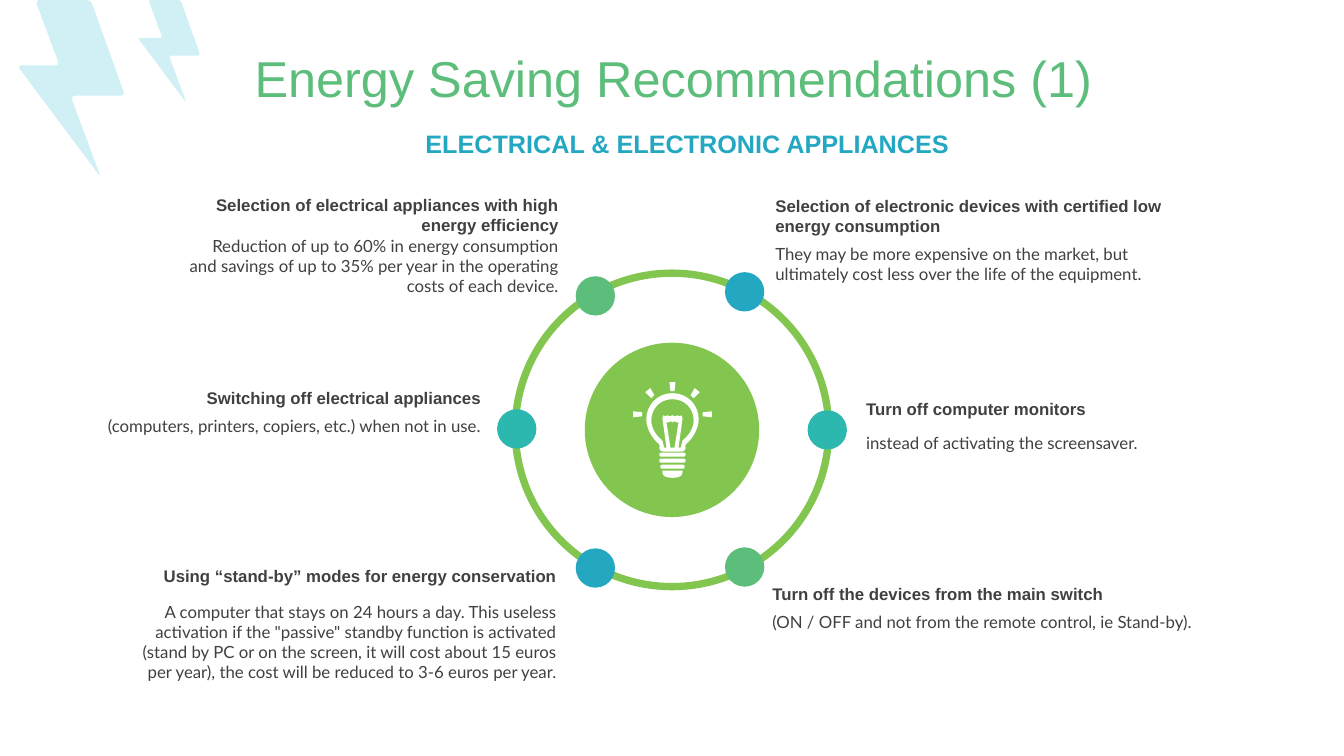
from dataclasses import dataclass

from pptx import Presentation
from pptx.dml.color import RGBColor
from pptx.enum.shapes import MSO_SHAPE as Preset
from pptx.enum.text import MSO_ANCHOR as Anchor, PP_ALIGN as Align
from pptx.shapes.autoshape import Shape
from pptx.slide import Slide
from pptx.util import Inches, Pt

WHITE = RGBColor(0xFF, 0xFF, 0xFF)
PALE_BLUE = RGBColor(0xD0, 0xF0, 0xF6)
LIME = RGBColor(0x82, 0xC6, 0x50)
GREEN = RGBColor(0x5C, 0xBE, 0x7A)
TEAL = RGBColor(0x2C, 0xB8, 0xAE)
BLUE = RGBColor(0x24, 0xA8, 0xC2)
DARK = RGBColor(0x40, 0x40, 0x40)

Point = tuple[float, float]
Outline = list[Point]

KNOB_SIZE = 0.39
BULB_AXIS = 6.67
BOLT = [(0.16, 0), (0.71, 0), (1.05, 0.95), (0.51, 0.95), (0.81, 1.76), (-0.02, 0.65), (0.4, 0.65)]


@dataclass
class Style:
    font: str
    size: float
    color: RGBColor
    bold: bool = False
    align: Align = Align.LEFT
    anchor: Anchor = Anchor.TOP


@dataclass
class Knob:
    left: float
    top: float
    color: RGBColor


@dataclass
class Note:
    left: float
    width: float
    align: Align
    heading: str
    heading_top: float
    heading_height: float
    body: str
    body_top: float
    body_height: float


KNOBS = [
    Knob(7.19, 2.7, BLUE), Knob(7.19, 5.43, GREEN), Knob(8.01, 4.07, TEAL),
    Knob(5.71, 2.74, GREEN), Knob(5.71, 5.44, BLUE), Knob(4.93, 4.06, TEAL),
]

NOTES = [
    Note(7.69, 4.25, Align.LEFT,
         "Selection of electronic devices with certified low energy consumption", 1.89, 0.5,
         "They may be more expensive on the market, but ultimately cost less over the life "
         "of the equipment.", 2.37, 0.5),
    Note(8.59, 3.96, Align.LEFT, "Turn off computer monitors", 3.91, 0.3,
         "instead of activating the screensaver.", 4.24, 0.3),
    Note(7.66, 4.58, Align.LEFT, "Turn off the devices from the main switch", 5.74, 0.3,
         "(ON / OFF and not from the remote control, ie Stand-by).", 6.02, 0.3),
    Note(1.84, 3.8, Align.RIGHT,
         "Selection of electrical appliances with high energy efficiency", 1.88, 0.5,
         "Reduction of up to 60% in energy consumption and savings of up to 35% per year "
         "in the operating costs of each device.", 2.29, 0.5),
    Note(0.89, 3.98, Align.RIGHT, "Switching off electrical appliances", 3.8, 0.3,
         "(computers, printers, copiers, etc.) when not in use.", 4.08, 0.3),
    Note(1.27, 4.35, Align.RIGHT, "Using “stand-by” modes for energy conservation", 5.56, 0.3,
         "A computer that stays on 24 hours a day. This useless activation if the \"passive\" "
         "standby function is activated (stand by PC or on the screen, it will cost about "
         "15 euros per year), the cost will be reduced to 3-6 euros per year.", 5.92, 0.91),
]


def curve(start: Point, *controls: Point, steps: int = 8) -> Outline:
    """Sample a chain of cubic Bézier segments, three controls for each."""
    points = [start]
    for index in range(0, len(controls), 3):
        corners = (points[-1], *controls[index:index + 3])
        for step in range(1, steps + 1):
            t = step / steps
            weights = ((1 - t) ** 3, 3 * t * (1 - t) ** 2, 3 * t * t * (1 - t), t ** 3)
            points.append((sum(w * x for w, (x, _) in zip(weights, corners)),
                           sum(w * y for w, (_, y) in zip(weights, corners))))
    return points


def rounded(corners: Outline, reach: float) -> Outline:
    """Round each corner, starting at the given distance before it."""
    points: Outline = []
    for index, (x, y) in enumerate(corners):
        ends = []
        for other_x, other_y in (corners[index - 1], corners[(index + 1) % len(corners)]):
            share = reach / ((other_x - x) ** 2 + (other_y - y) ** 2) ** 0.5
            ends.append((x + share * (other_x - x), y + share * (other_y - y)))
        middle = [(end_x + 2 * (x - end_x) / 3, end_y + 2 * (y - end_y) / 3) for end_x, end_y in ends]
        points += curve(ends[0], *middle, ends[1], steps=4)
    return points


def mirrored(half: Outline) -> Outline:
    return [(-x, y) for x, y in reversed(half)]


def paint(shape: Shape, color: RGBColor) -> None:
    shape.shadow.inherit = False
    shape.fill.solid()
    shape.fill.fore_color.rgb = color
    shape.line.fill.background()


def add_outlines(page: Slide, outlines: list[Outline], color: RGBColor) -> None:
    """Draw one freeform; outlines inside others cut holes."""
    paths = [[(Inches(x), Inches(y)) for x, y in outline] for outline in outlines]
    builder = page.shapes.build_freeform(*paths[0][0])
    for index, (start, *others) in enumerate(paths):
        if index:
            builder.move_to(*start)
        builder.add_line_segments(others, close=True)
    paint(builder.convert_to_shape(), color)


def add_circle(page: Slide, left: float, top: float, size: float, color: RGBColor) -> Shape:
    circle = page.shapes.add_shape(
        Preset.OVAL, Inches(left), Inches(top), Inches(size), Inches(size))
    paint(circle, color)
    return circle


def add_text(page: Slide, text: str, left: float, top: float, width: float, height: float,
             style: Style, margins: tuple[float, float, float, float]) -> None:
    box = page.shapes.add_textbox(Inches(left), Inches(top), Inches(width), Inches(height))
    frame = box.text_frame
    frame.word_wrap = True
    frame.vertical_anchor = style.anchor
    (frame.margin_left, frame.margin_top,
     frame.margin_right, frame.margin_bottom) = map(Inches, margins)
    para = frame.paragraphs[0]
    para.text = text
    para.alignment = style.align
    para.font.name = style.font
    para.font.size = Pt(style.size)
    para.font.bold = style.bold
    para.font.color.rgb = style.color


def add_note(page: Slide, note: Note) -> None:
    margins = (0, 0.05, 0.1, 0.05)
    add_text(page, note.heading, note.left, note.heading_top, note.width, note.heading_height,
             Style("Arial", 12, DARK, True, note.align, Anchor.MIDDLE), margins)
    add_text(page, note.body, note.left, note.body_top, note.width, note.body_height,
             Style("Lato", 12, DARK, align=note.align), margins)


def add_bulb(page: Slide) -> None:
    glass = curve((0, 3.9), (0.15, 3.9), (0.26, 4.02), (0.26, 4.16),
                  (0.26, 4.26), (0.19, 4.36), (0.14, 4.4), (0.12, 4.42), (0.13, 4.43), (0.13, 4.45),
                  (0.12, 4.47), (0.11, 4.48), (0.09, 4.48))
    hollow = curve((0, 3.96), (0.12, 3.96), (0.21, 4.05), (0.21, 4.17),
                   (0.21, 4.25), (0.16, 4.32), (0.11, 4.36), (0.09, 4.38), (0.1, 4.38), (0.09, 4.41),
                   (0.08, 4.44), (0.09, 4.44), (0.07, 4.44))
    filament = [(0, 4.12), (0.03, 4.13), (0.05, 4.12), (0.07, 4.13), (0.09, 4.12),
                (0.1, 4.15), (0.06, 4.44)]
    filament_gap = [(0, 4.19), (0.02, 4.18), (0.04, 4.19), (0.06, 4.19), (0.02, 4.44)]
    foot = [(0, 4.67), *curve((0.1, 4.67), (0.1, 4.7), (0.1, 4.74), (0, 4.74))]
    top_ray = [(0.03, 3.79), (0.02, 3.88)]
    outlines = [half + mirrored(half)
                for half in (glass, hollow, filament, filament_gap, foot, top_ray)]
    for ray in ([(0.39, 4.08), (0.39, 4.14), (0.3, 4.13), (0.3, 4.09)],
                [(0.22, 3.85), (0.27, 3.89), (0.21, 3.95), (0.18, 3.92)]):
        outlines += [ray, mirrored(ray)]
    for index, reach in enumerate((0.13, 0.13, 0.12)):
        top = 4.49 + 0.06 * index
        edge = [(reach, top), (reach, top + 0.04)]
        outlines.append(rounded(edge + mirrored(edge), 0.02))
    add_outlines(page, [[(BULB_AXIS + x, y) for x, y in outline] for outline in outlines], WHITE)


def main() -> None:
    deck = Presentation()
    deck.slide_width, deck.slide_height = Inches(13.33), Inches(7.5)
    page = deck.slides.add_slide(deck.slide_layouts[6])

    for left, scale in ((0.19, 1), (1.38, 0.58)):
        bolt = [(left + scale * x, scale * y) for x, y in rounded(BOLT, 0.05)]
        add_outlines(page, [bolt], PALE_BLUE)
    add_text(page, "Energy Saving Recommendations (1)", 0.35, 0.37, 12.66, 0.79,
             Style("Arial", 36, GREEN, align=Align.CENTER, anchor=Anchor.MIDDLE),
             (0.1, 0.05, 0.1, 0.05))
    add_circle(page, 5.8, 3.4, 1.73, LIME)
    ring = add_circle(page, 5.11, 2.71, 3.11, LIME)
    ring.fill.background()
    ring.line.color.rgb = LIME
    ring.line.width = Pt(5.25)
    for knob in KNOBS:
        add_circle(page, knob.left, knob.top, KNOB_SIZE, knob.color)
    for note in NOTES:
        add_note(page, note)
    add_bulb(page)
    add_text(page, "ELECTRICAL & ELECTRONIC APPLIANCES", 4.18, 1.27, 7.67, 0.3,
             Style("Arial", 18, BLUE, True), (0.04, 0, 0.04, 0))
    deck.save("out.pptx")


if __name__ == "__main__":
    main()
